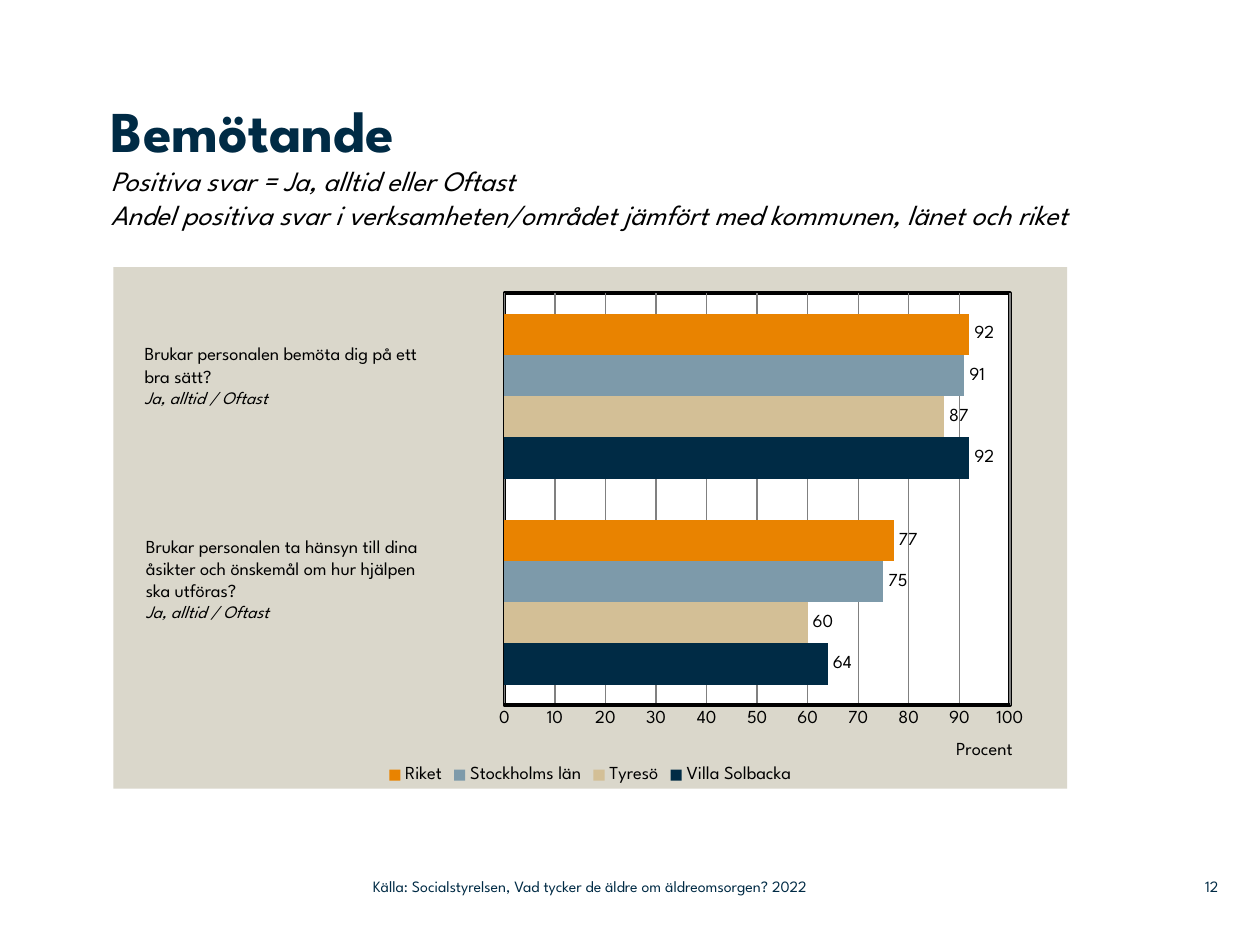
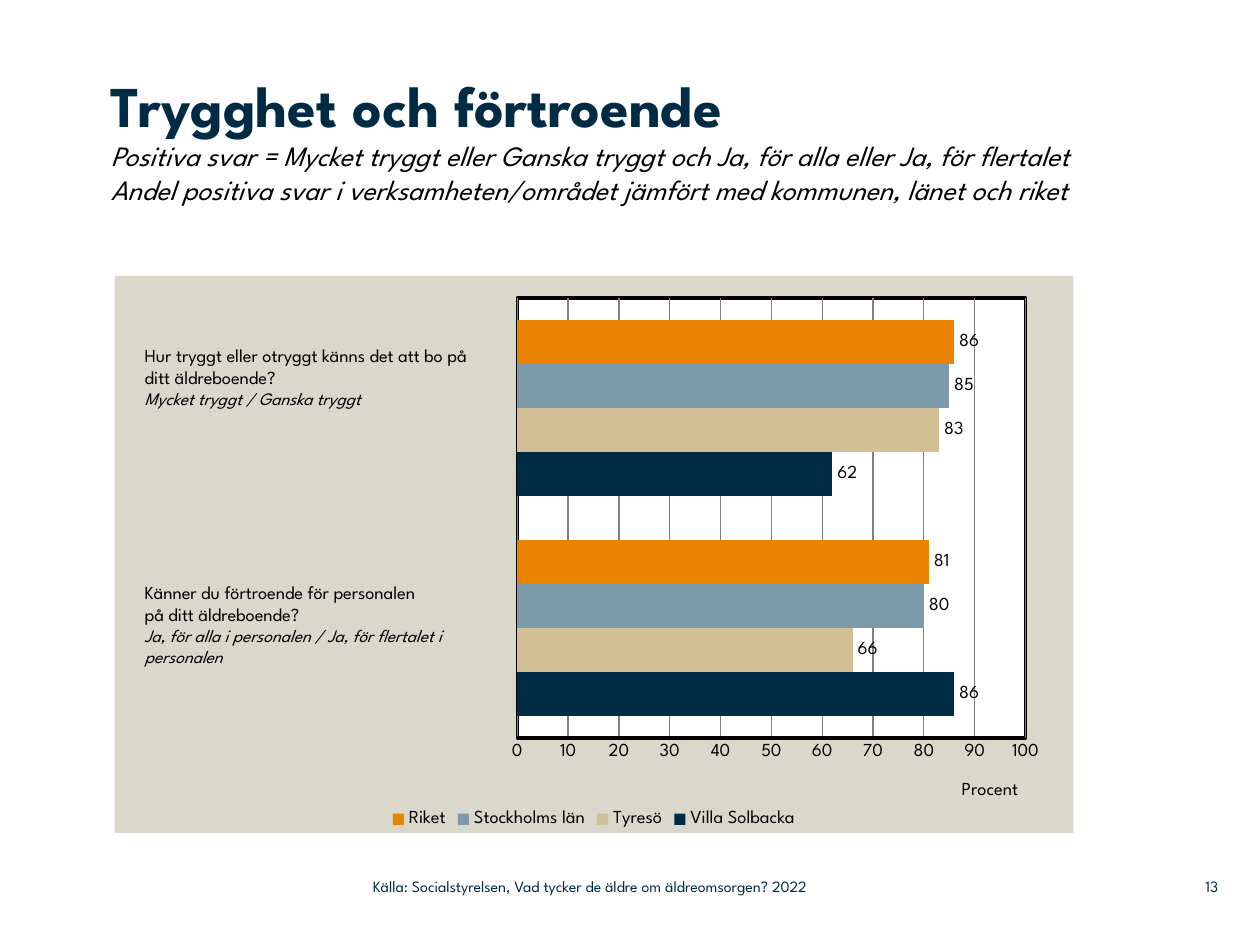
from lxml import etree
from pptx import Presentation
from pptx.chart.data import CategoryChartData
from pptx.dml.color import RGBColor
from pptx.enum.chart import XL_CHART_TYPE, XL_LABEL_POSITION, XL_LEGEND_POSITION, XL_TICK_MARK
from pptx.enum.text import MSO_ANCHOR, MSO_AUTO_SIZE, PP_ALIGN
from pptx.oxml import parse_xml
from pptx.oxml.ns import nsdecls, qn
from pptx.util import Inches, Pt

BAR = XL_CHART_TYPE.BAR_CLUSTERED
OUTSIDE = XL_LABEL_POSITION.OUTSIDE_END
BOTTOM = XL_LEGEND_POSITION.BOTTOM
NO_TICK = XL_TICK_MARK.NONE
TOP, MIDDLE = MSO_ANCHOR.TOP, MSO_ANCHOR.MIDDLE
LEFT, RIGHT = PP_ALIGN.LEFT, PP_ALIGN.RIGHT
NO_FIT = MSO_AUTO_SIZE.NONE

FONT = "League Spartan"
COLORS = {
    "navy": "002B45", "sand": "D3BF96", "steel": "7D9AAA", "orange": "E98300",
    "panel": "DAD7CB", "grid": "808080", "black": "000000", "white": "FFFFFF",
}
SERIES = [("Villa Solbacka", "navy"), ("Tyresö", "sand"),
          ("Stockholms län", "steel"), ("Riket", "orange")]
COMPARISON = "Andel positiva svar i verksamheten/området jämfört med kommunen, länet och riket"
SOURCE = "Källa: Socialstyrelsen, Vad tycker de äldre om äldreomsorgen? 2022"

SLIDES = [
    {
        "number": 12,
        "title": "Bemötande",
        "title_box": (0.88, 0.75, 8.04, 1.2),
        "positive": "Positiva svar = Ja, alltid eller Oftast",
        "chart_box": (0.9, 2.12, 7.57, 4.14),
        "plot": (0.41, 0.05, 0.53, 0.79),
        "values": [(64, 92), (60, 87), (75, 91), (77, 92)],
        "questions": [
            ((1.05, 2.67, 2.97, 0.81),
             ["Brukar personalen bemöta dig på ett", "bra sätt?"],
             "Ja, alltid / Oftast"),
            ((1.06, 4.2, 3.01, 0.98),
             ["Brukar personalen ta hänsyn till dina",
              "åsikter och önskemål om hur hjälpen", "ska utföras?"],
             "Ja, alltid / Oftast"),
        ],
    },
    {
        "number": 13,
        "title": "Trygghet och förtroende",
        "title_box": (0.88, 0.55, 7.75, 1.64),
        "positive": "Positiva svar = Mycket tryggt eller Ganska tryggt och "
                    "Ja, för alla eller Ja, för flertalet",
        "chart_box": (0.91, 2.19, 7.61, 4.42),
        "plot": (0.42, 0.04, 0.53, 0.79),
        "values": [(86, 62), (66, 83), (80, 85), (81, 86)],
        "questions": [
            ((1.05, 2.68, 2.98, 0.81),
             ["Hur tryggt eller otryggt känns det att bo på ditt äldreboende?"],
             "Mycket tryggt / Ganska tryggt"),
            ((1.05, 4.56, 3, 0.98),
             ["Känner du förtroende för personalen", "på ditt äldreboende?"],
             "Ja, för alla i personalen / Ja, för flertalet i personalen"),
        ],
    },
]


def rgb(name):
    return RGBColor.from_string(COLORS[name])


def style_font(font, size=10.5, color="black", bold=False, italic=False):
    font.name = FONT
    font.size = Pt(size)
    font.bold = bold
    font.italic = italic
    font.color.rgb = rgb(color)


def add_run(p, text, **fmt):
    r = p.add_run()
    r.text = text
    style_font(r.font, **fmt)


def set_layout(parent, index, x, y, w=None, h=None):
    """Place a chart part by fractions of the chart area."""
    old = parent.find(qn("c:layout"))
    if old is not None:
        parent.remove(old)
    layout = parse_xml(f"<c:layout {nsdecls('c')}><c:manualLayout/></c:layout>")
    entries = [("xMode", "edge"), ("yMode", "edge"), ("x", x), ("y", y)]
    if w is not None:
        entries = [("layoutTarget", "inner")] + entries + [("w", w), ("h", h)]
    for tag, val in entries:
        etree.SubElement(layout[0], qn(f"c:{tag}")).set("val", str(val))
    parent.insert(index, layout)


def area_format(fill, line=None):
    """Fill and outline for the chart area or the plot area."""
    def solid(name):
        return f'<a:solidFill><a:srgbClr val="{COLORS[name]}"/></a:solidFill>'
    outline = solid(line) if line else "<a:noFill/>"
    return parse_xml(f"<c:spPr {nsdecls('c', 'a')}>{solid(fill)}"
                     f'<a:ln w="{Pt(2)}">{outline}</a:ln></c:spPr>')


class Deck:
    def __init__(self):
        self.prs = Presentation()
        self.prs.slide_width, self.prs.slide_height = Inches(10), Inches(7.5)
        self.s = None

    def new_slide(self):
        self.s = self.prs.slides.add_slide(self.prs.slide_layouts[5])

    def title(self, box, heading, *subtitles):
        sp = self.s.shapes.title
        sp.left, sp.top, sp.width, sp.height = map(Inches, box)
        tf = sp.text_frame
        self.frame(tf, TOP, inset=0)
        p = tf.paragraphs[0]
        p.alignment = LEFT
        add_run(p, heading, size=33, color="navy", bold=True)
        for text in subtitles:
            p.add_line_break()
            add_run(p, text, size=16, italic=True)

    def frame(self, tf, anchor, inset=None):
        tf.word_wrap = True
        tf.auto_size = NO_FIT
        tf.vertical_anchor = anchor
        if inset is not None:
            tf.margin_left = tf.margin_right = Inches(inset)
            tf.margin_top = tf.margin_bottom = Inches(inset)

    def text(self, box, lines, anchor=TOP, align=LEFT, inset=None):
        """Each line is (text, format)."""
        tf = self.s.shapes.add_textbox(*map(Inches, box)).text_frame
        self.frame(tf, anchor, inset)
        for i, (text, fmt) in enumerate(lines):
            p = tf.add_paragraph() if i else tf.paragraphs[0]
            p.alignment = align
            add_run(p, text, **fmt)

    def question(self, box, lines, answer):
        self.text(box, [(line, {}) for line in lines]
                  + [(answer, {"size": 10, "italic": True})])

    def footer(self, number):
        small = {"size": 9, "color": "navy"}
        self.text((2.96, 6.89, 4.43, 0.29), [(SOURCE, small)], MIDDLE, inset=0)
        self.text((9.2, 6.89, 0.47, 0.29), [(str(number), small)], MIDDLE, RIGHT, inset=0)

    def chart(self, box, plot_layout, values):
        data = CategoryChartData()
        data.categories = ["1", "2"]
        for (name, _), vals in zip(SERIES, values):
            data.add_series(name, vals)
        chart = self.s.shapes.add_chart(BAR, *map(Inches, box), data).chart
        style_font(chart.font)
        chart.has_title = False
        chart.has_legend = True
        chart.legend.position = BOTTOM
        chart.legend.include_in_layout = False
        style_font(chart.legend.font)

        # Bars and value labels
        plot = chart.plots[0]
        plot.gap_width = 100
        plot.overlap = 0
        plot.vary_by_categories = False
        for series, (_, color) in zip(plot.series, SERIES):
            series.format.fill.solid()
            series.format.fill.fore_color.rgb = rgb(color)
            series.invert_if_negative = False
            labels = series.data_labels
            labels.show_value = True
            labels.position = OUTSIDE
            style_font(labels.font)

        # Axes
        chart.category_axis.visible = False
        axis = chart.value_axis
        axis.minimum_scale, axis.maximum_scale, axis.major_unit = 0, 100, 10
        axis.major_tick_mark = axis.minor_tick_mark = NO_TICK
        style_font(axis.tick_labels.font)
        axis.has_major_gridlines = True
        for line, color, width in ((axis.format.line, "black", 2),
                                   (axis.major_gridlines.format.line, "grid", 0.75)):
            line.color.rgb = rgb(color)
            line.width = Pt(width)
        add_run(axis.axis_title.text_frame.paragraphs[0], "Procent")

        # Panel, plot area and placement
        space = chart._chartSpace
        space.find(qn("c:chart")).addnext(area_format("panel"))
        area = space.find(".//" + qn("c:plotArea"))
        area.append(area_format("white", "black"))
        set_layout(area, 0, *plot_layout)
        set_layout(area.find(".//" + qn("c:title")), 1, 0.88, 0.9)


def main():
    deck = Deck()
    for item in SLIDES:
        deck.new_slide()
        deck.title(item["title_box"], item["title"], item["positive"], COMPARISON)
        deck.chart(item["chart_box"], item["plot"], item["values"])
        for question in item["questions"]:
            deck.question(*question)
        deck.footer(item["number"])
    deck.prs.save("out.pptx")


if __name__ == "__main__":
    main()
